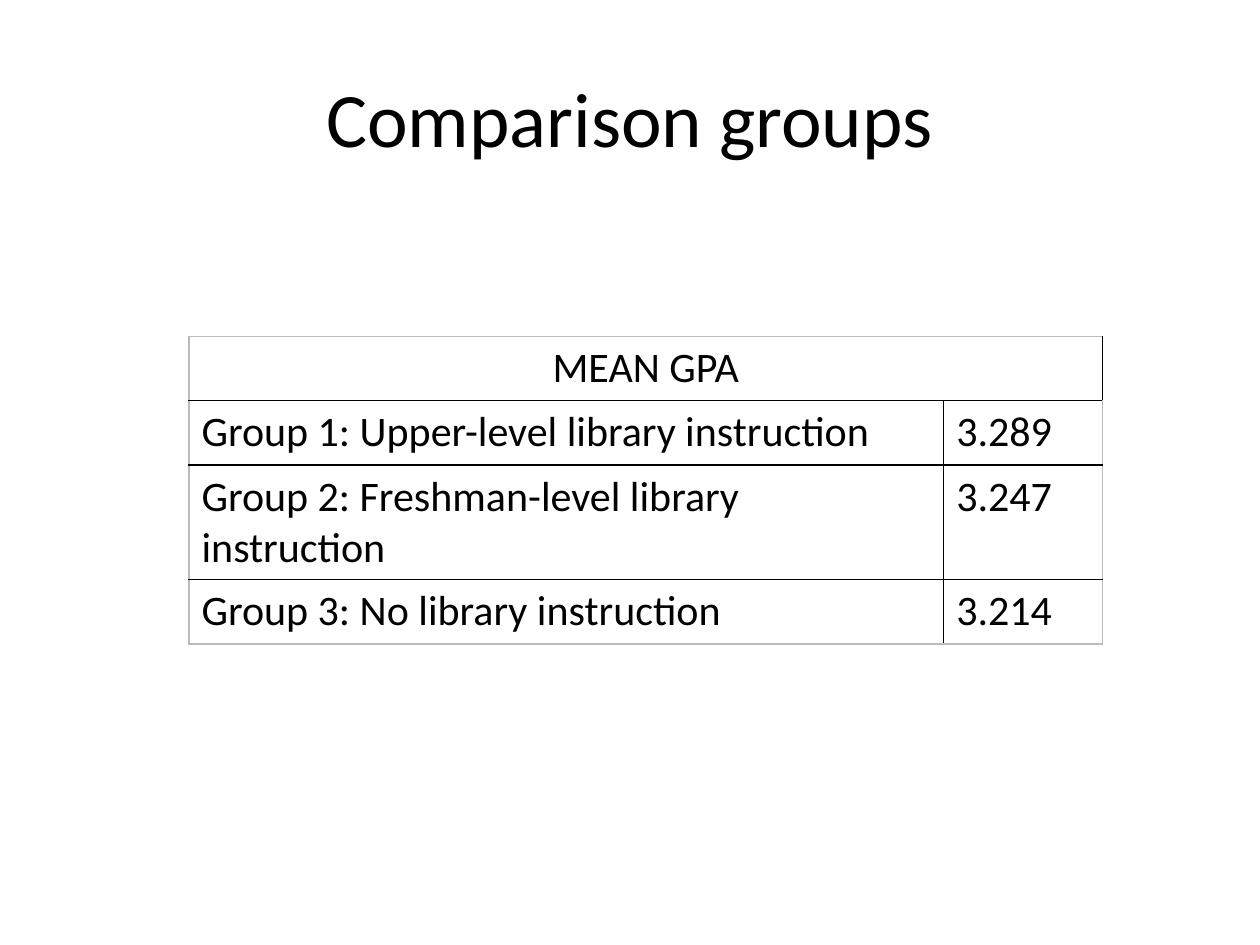
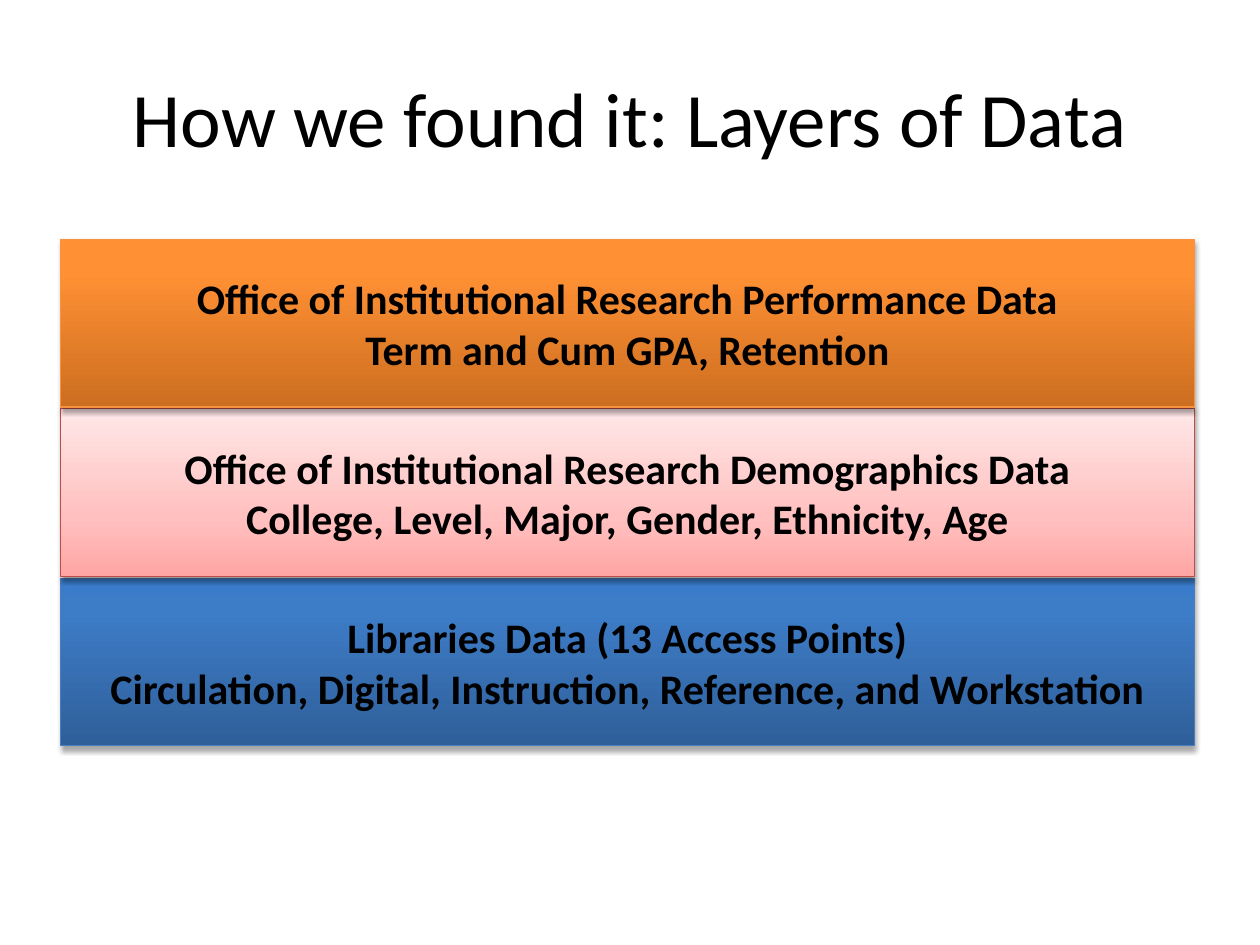
from lxml.etree import SubElement
from pptx import Presentation
from pptx.dml.color import RGBColor
from pptx.enum.shapes import MSO_SHAPE
from pptx.enum.text import MSO_ANCHOR, PP_ALIGN
from pptx.oxml.ns import qn
from pptx.util import Inches, Pt

WIDTH, HEIGHT = 10, 7.5
FONT = "Calibri"
BLACK = RGBColor(0x00, 0x00, 0x00)
WHITE = RGBColor(0xFF, 0xFF, 0xFF)
GRAY = RGBColor(0xBB, 0xBB, 0xBB)
ORANGE = RGBColor(0xF6, 0x92, 0x40)
RED = RGBColor(0xBF, 0x4C, 0x48)
BLUE = RGBColor(0x4B, 0x7E, 0xBC)
ORANGE_FADE = [(0, RGBColor(0xCC, 0x6E, 0x20)), (80, RGBColor(0xFF, 0x90, 0x34)),
               (100, RGBColor(0xFF, 0x91, 0x36))]
PINK_FADE = [(0, RGBColor(0xFF, 0xA6, 0xA5)), (35, RGBColor(0xFF, 0xC0, 0xBF)),
             (100, RGBColor(0xFF, 0xE7, 0xE7))]
BLUE_FADE = [(0, RGBColor(0x2F, 0x5F, 0x99)), (80, RGBColor(0x3D, 0x7C, 0xC7)),
             (100, RGBColor(0x3A, 0x7C, 0xCB))]

TITLE_FORMAT = {"name": FONT, "size": Pt(44), "bold": False}
CELL_FORMAT = {"name": FONT, "size": Pt(24), "bold": False}
LAYER_FORMAT = {"name": FONT, "size": Pt(24), "bold": True}

GPA_TITLE = "Comparison groups"
GPA_HEADING = "MEAN GPA"
GPA_GROUPS = [
    ("Group 1: Upper-level library instruction", "3.289"),
    ("Group 2: Freshman-level library instruction", "3.247"),
    ("Group 3: No library instruction", "3.214"),
]
GPA_LEFT, GPA_TOP = 1.5, 2.67
GPA_COLUMNS = [5.99, 1.26]
GPA_ROWS = [0.51, 0.51, 0.91, 0.51]

LAYERS_TITLE = "How we found it: Layers of Data"
# Top to bottom: lines of text, gradient, outline, shadow opacity, shadow distance
LAYERS = [
    (["Office of Institutional Research Performance Data",
      "Term and Cum GPA, Retention"], ORANGE_FADE, ORANGE, 35, 1.8),
    (["Office of Institutional Research Demographics Data",
      "College, Level, Major, Gender, Ethnicity, Age"], PINK_FADE, RED, 38, 1.6),
    (["Libraries Data (13 Access Points)",
      "Circulation, Digital, Instruction, Reference, and Workstation"],
     BLUE_FADE, BLUE, 35, 1.8),
]
LAYER_LEFT, LAYER_TOP, LAYER_PITCH = 0.48, 1.9, 1.345
LAYER_WIDTH, LAYER_HEIGHT = 0.9 * WIDTH, 1.33


def write(frame, lines, font_format, align=PP_ALIGN.CENTER):
    frame.word_wrap = True
    for index, line in enumerate(lines):
        paragraph = frame.add_paragraph() if index else frame.paragraphs[0]
        paragraph.alignment = align
        run = paragraph.add_run()
        run.text = line
        run.font.color.rgb = BLACK
        for attribute, value in font_format.items():
            setattr(run.font, attribute, value)


def add_titled_slide(deck, title):
    slide = deck.slides.add_slide(deck.slide_layouts[6])
    box = slide.shapes.add_textbox(Inches(0.05 * WIDTH), Inches(0.04 * HEIGHT),
                                   Inches(0.9 * WIDTH), Inches(1.25))
    box.text_frame.vertical_anchor = MSO_ANCHOR.MIDDLE
    write(box.text_frame, [title], TITLE_FORMAT)
    return slide


def add_color(parent, color):
    return SubElement(parent, qn("a:srgbClr"), val=str(color))


def set_borders(cell, colors):
    properties = cell._tc.get_or_add_tcPr()
    for side, color in zip("LRTB", colors):
        border = SubElement(properties, qn(f"a:ln{side}"), w=str(Pt(1)))
        add_color(SubElement(border, qn("a:solidFill")), color)


def add_gpa_table(slide):
    rows, columns = len(GPA_ROWS), len(GPA_COLUMNS)
    table = slide.shapes.add_table(
        rows, columns, Inches(GPA_LEFT), Inches(GPA_TOP),
        Inches(sum(GPA_COLUMNS)), Inches(sum(GPA_ROWS))).table
    table.first_row = table.horz_banding = False
    for column, width in zip(table.columns, GPA_COLUMNS):
        column.width = Inches(width)
    for row, height in zip(table.rows, GPA_ROWS):
        row.height = Inches(height)

    for r in range(rows):
        for c in range(columns):
            cell = table.cell(r, c)
            on_edge = (c == 0, c == columns - 1, r == 0, r == rows - 1)
            set_borders(cell, [GRAY if edge else BLACK for edge in on_edge])
            cell.fill.solid()
            cell.fill.fore_color.rgb = WHITE
            if r:
                write(cell.text_frame, [GPA_GROUPS[r - 1][c]], CELL_FORMAT, PP_ALIGN.LEFT)
    heading = table.cell(0, 0)
    heading.merge(table.cell(0, columns - 1))
    write(heading.text_frame, [GPA_HEADING], CELL_FORMAT)


def fade(shape, stops):
    """Fill the shape with the stops, running from its bottom to its top."""
    shape.fill.gradient()
    shape.fill.gradient_angle = 90
    stop_list = shape._element.spPr.find(".//" + qn("a:gsLst"))
    for stop in list(stop_list):
        stop_list.remove(stop)
    for percent, color in stops:
        add_color(SubElement(stop_list, qn("a:gs"), pos=str(percent * 1000)), color)


def drop_shadow(shape, opacity, distance):
    shape.shadow.inherit = False
    effects = shape._element.spPr.find(qn("a:effectLst"))
    shadow = SubElement(effects, qn("a:outerShdw"), blurRad=str(Pt(3.1)),
                        dist=str(Pt(distance)), dir=str(90 * 60000), rotWithShape="0")
    SubElement(add_color(shadow, BLACK), qn("a:alpha"), val=str(opacity * 1000))


def add_layers(slide):
    """Stack the layers from the lowest up, so each one overlaps the one below."""
    for level, (lines, stops, outline, opacity, distance) in reversed(list(enumerate(LAYERS))):
        layer = slide.shapes.add_shape(
            MSO_SHAPE.RECTANGLE, Inches(LAYER_LEFT), Inches(LAYER_TOP + level * LAYER_PITCH),
            Inches(LAYER_WIDTH), Inches(LAYER_HEIGHT))
        fade(layer, stops)
        layer.line.color.rgb = outline
        layer.line.width = Pt(0.75)
        drop_shadow(layer, opacity, distance)
        layer.text_frame.vertical_anchor = MSO_ANCHOR.MIDDLE
        write(layer.text_frame, lines, LAYER_FORMAT)


def main():
    deck = Presentation()
    deck.slide_width, deck.slide_height = Inches(WIDTH), Inches(HEIGHT)
    add_gpa_table(add_titled_slide(deck, GPA_TITLE))
    add_layers(add_titled_slide(deck, LAYERS_TITLE))
    deck.save("out.pptx")


if __name__ == "__main__":
    main()
